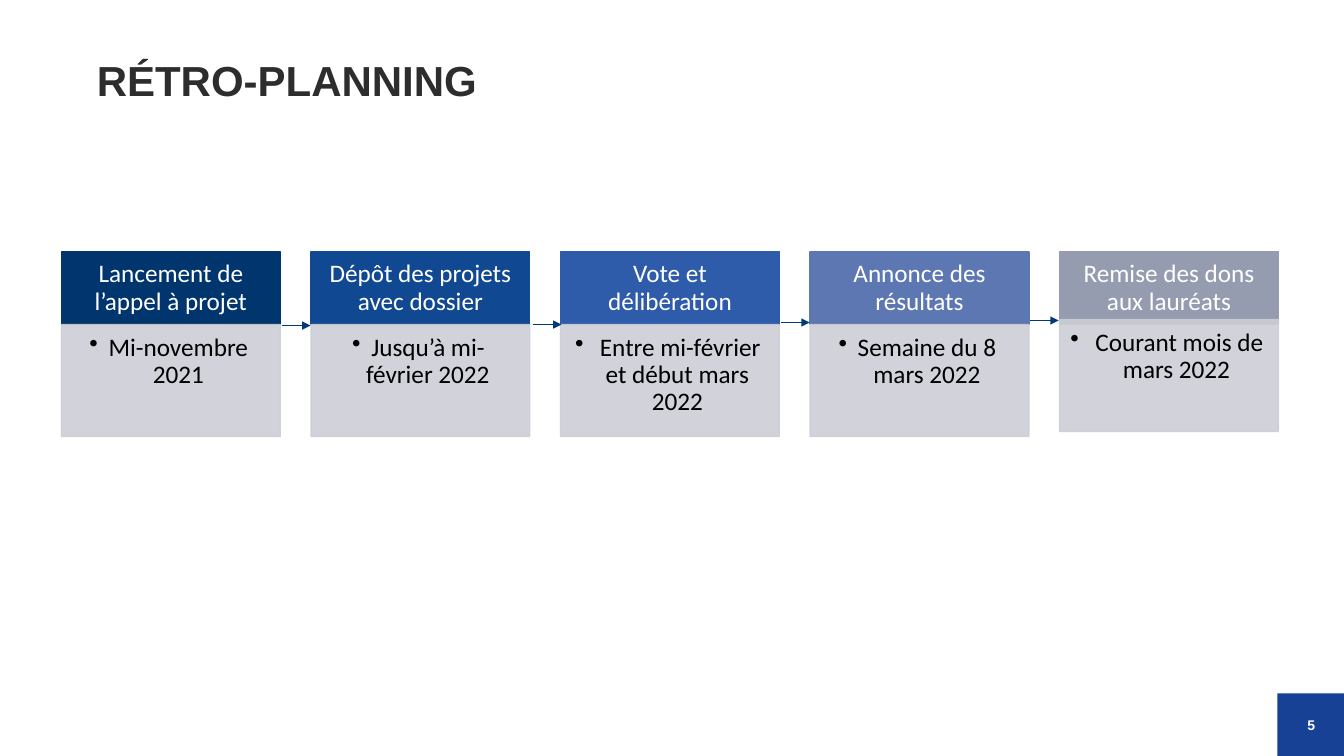
from lxml import etree
from pptx import Presentation
from pptx.dml.color import RGBColor
from pptx.enum import shapes, text
from pptx.oxml import ns
from pptx.util import Inches, Pt

WHITE = RGBColor(0xFF, 0xFF, 0xFF)
BLACK = RGBColor(0x00, 0x00, 0x00)
CHARCOAL = RGBColor(0x2D, 0x2D, 0x2D)
PAGE_BLUE = RGBColor(0x16, 0x41, 0x94)
ARROW_BLUE = RGBColor(0x00, 0x3A, 0x78)
DATE_GREY = RGBColor(0xCC, 0xCE, 0xD6)

STEPS = [
    ("Lancement de l’appel à projet", "Mi-novembre 2021", RGBColor(0x00, 0x35, 0x6D), 3.22),
    ("Dépôt des projets avec dossier", "Jusqu’à mi-février 2022", RGBColor(0x11, 0x48, 0x92), 3.22),
    ("Vote et délibération", " Entre mi-février et début mars 2022", RGBColor(0x2E, 0x5C, 0xAB), 3.22),
    ("Annonce des résultats", "Semaine du 8 mars 2022", RGBColor(0x5D, 0x77, 0xB2), 3.22),
    ("Remise des dons aux lauréats", " Courant mois de mars 2022", RGBColor(0x95, 0x9C, 0xB0), 3.17),
]
ARROW_STARTS = [(2.8, 3.23), (5.29, 3.22), (7.75, 3.2), (10.22, 3.18)]
ARROW_LENGTH = 0.28
STEP_WIDTH, STEP_PITCH = 2.17, 2.475
HEADING_HEIGHT, DATE_HEIGHT = 0.72, 1.11


def style_paragraph(paragraph, font_name, size, color, bold=False):
    """Set the font of a whole paragraph."""
    font = paragraph.font
    font.name, font.size, font.bold = font_name, Pt(size), bold
    font.color.rgb = color


def set_insets(frame, left, top, right, bottom):
    """Set the four inner margins of a text frame in inches."""
    frame.margin_left, frame.margin_top = Inches(left), Inches(top)
    frame.margin_right, frame.margin_bottom = Inches(right), Inches(bottom)


def add_panel(slide, box, color, wording, size, font_color, font_name="Calibri", bold=False):
    """Add a filled rectangle with one centred paragraph."""
    panel = slide.shapes.add_shape(shapes.MSO_SHAPE.RECTANGLE, *map(Inches, box))
    panel.shadow.inherit = False
    panel.fill.solid()
    panel.fill.fore_color.rgb = color
    panel.line.color.rgb = color
    panel.line.width = Pt(1)
    frame = panel.text_frame
    frame.word_wrap = True
    frame.vertical_anchor = text.MSO_ANCHOR.MIDDLE
    paragraph = frame.paragraphs[0]
    paragraph.text = wording
    paragraph.alignment = text.PP_ALIGN.CENTER
    style_paragraph(paragraph, font_name, size, font_color, bold)
    return panel


def add_title(slide, box, wording):
    """Place and format the title placeholder."""
    title = slide.shapes.title
    title.left, title.top, title.width, title.height = map(Inches, box)
    frame = title.text_frame
    set_insets(frame, 0, 0, 0, 0)
    frame.word_wrap = True
    frame.vertical_anchor = text.MSO_ANCHOR.TOP
    paragraph = frame.paragraphs[0]
    paragraph.text = wording
    paragraph.alignment = text.PP_ALIGN.LEFT
    paragraph.line_spacing = Pt(30)
    style_paragraph(paragraph, "Arial", 30, CHARCOAL, bold=True)


def add_heading(slide, box, wording, color):
    """Add the coloured heading of a step."""
    frame = add_panel(slide, box, color, wording, 18, WHITE).text_frame
    set_insets(frame, 0.14, 0.08, 0.14, 0.08)
    frame.paragraphs[0].line_spacing = 0.9


def add_date(slide, box, wording):
    """Add the translucent date panel of a step with its bullet."""
    panel = add_panel(slide, box, DATE_GREY, wording, 18, BLACK)
    for color in panel._element.spPr.iter(ns.qn("a:srgbClr")):
        etree.SubElement(color, ns.qn("a:alpha"), val="90000")
    frame = panel.text_frame
    set_insets(frame, 0.1, 0.1, 0.14, 0.16)
    frame.vertical_anchor = text.MSO_ANCHOR.TOP
    paragraph = frame.paragraphs[0]
    paragraph.line_spacing = 0.9
    properties = paragraph._p.get_or_add_pPr()
    properties.set("marL", str(Inches(0.19)))
    properties.set("indent", str(Inches(-0.19)))
    bullet = etree.Element(ns.qn("a:buChar"), char="•")
    properties.find(ns.qn("a:defRPr")).addprevious(bullet)


def add_arrow(slide, x, y):
    """Add a short arrow pointing to the next step."""
    arrow = slide.shapes.add_connector(
        shapes.MSO_CONNECTOR.STRAIGHT, Inches(x), Inches(y), Inches(x + ARROW_LENGTH), Inches(y))
    arrow.line.color.rgb = ARROW_BLUE
    arrow.line.width = Pt(0.5)
    etree.SubElement(arrow.line._get_or_add_ln(), ns.qn("a:tailEnd"), type="triangle")
    etree.SubElement(arrow._element.spPr, ns.qn("a:effectLst"))


def add_timeline(slide, left, top):
    """Lay out the steps from left to right and join them with arrows."""
    for index, (heading, date, color, date_top) in enumerate(STEPS):
        x = left + index * STEP_PITCH
        add_heading(slide, (x, top, STEP_WIDTH, HEADING_HEIGHT), heading, color)
        add_date(slide, (x, date_top, STEP_WIDTH, DATE_HEIGHT), date)
    for x, y in ARROW_STARTS:
        add_arrow(slide, x, y)


def add_page_number(slide, box, number):
    """Add the blue corner block with the page number."""
    block = add_panel(slide, box, PAGE_BLUE, number, 10, WHITE, "Arial", bold=True)
    block.line.fill.background()
    set_insets(block.text_frame, 0, 0, 0, 0)


def main():
    """Build the schedule slide and save it."""
    deck = Presentation()
    deck.slide_width, deck.slide_height = Inches(13.33), Inches(7.5)
    slide = deck.slides.add_slide(deck.slide_layouts[5])
    add_page_number(slide, (12.67, 6.88, 0.67, 0.62), "5")
    add_title(slide, (0.96, 0.62, 11.38, 0.94), "RÉTRO-PLANNING")
    add_timeline(slide, 0.61, 2.5)
    deck.save("out.pptx")


if __name__ == "__main__":
    main()
